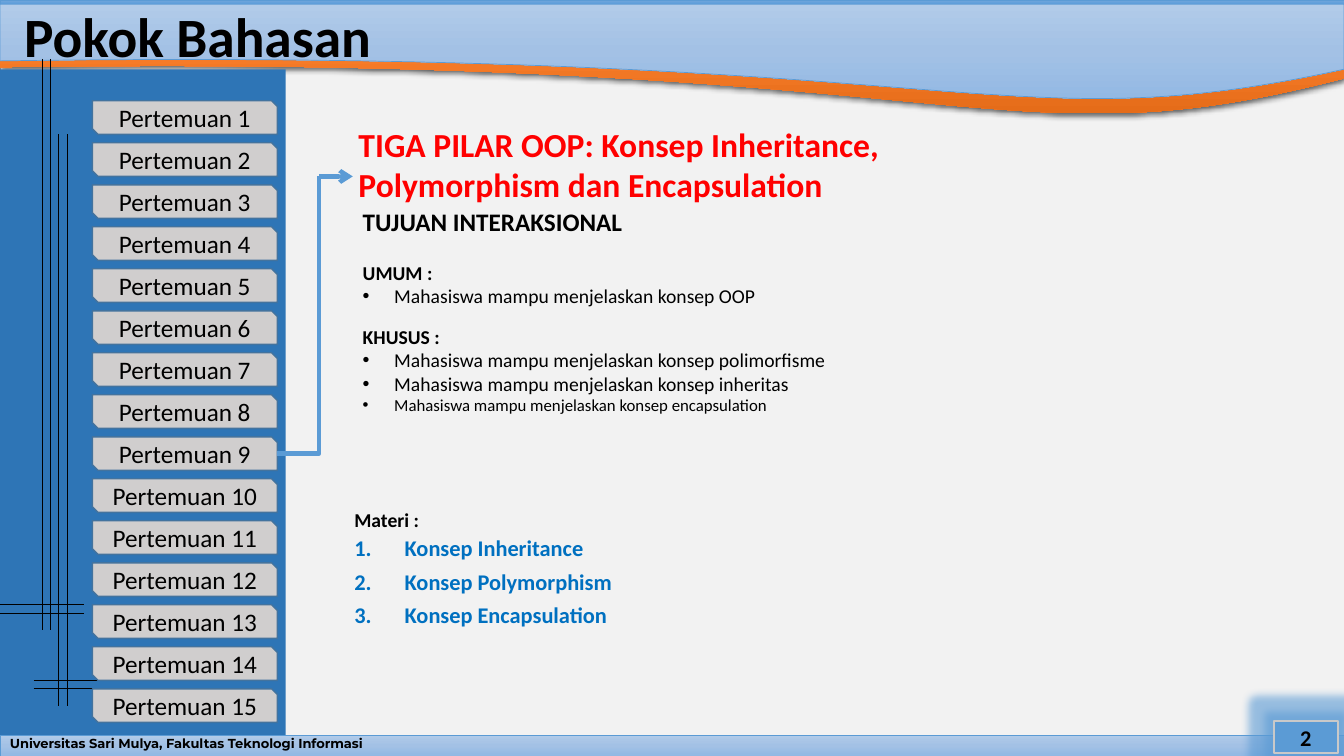
from copy import deepcopy

from lxml.etree import SubElement
from pptx import Presentation
from pptx.dml.color import RGBColor as RGB
from pptx.enum.shapes import MSO_CONNECTOR as LINK, MSO_SHAPE as SHAPE
from pptx.enum.text import MSO_ANCHOR as ANCHOR, PP_ALIGN as ALIGN
from pptx.oxml.ns import qn
from pptx.util import Pt

BLACK = RGB(0x00, 0x00, 0x00)
RED = RGB(0xFF, 0x00, 0x00)
AZURE = RGB(0x00, 0x70, 0xC0)
BLUE = RGB(0x5B, 0x9B, 0xD5)
NAVY = RGB(0x2E, 0x75, 0xB6)
EDGE = RGB(0x43, 0x73, 0x9E)
PAPER = RGB(0xF2, 0xF2, 0xF2)
GREY = RGB(0xA5, 0xA5, 0xA5)
SILVER = RGB(0xC9, 0xC9, 0xC9)
STONE = RGB(0xD0, 0xCE, 0xCE)
PALE = RGB(0xB1, 0xCB, 0xE9), RGB(0xA3, 0xC1, 0xE5), RGB(0x93, 0xB9, 0xE4)
DEEP = RGB(0x71, 0xA6, 0xDB), RGB(0x55, 0x9B, 0xDB), RGB(0x44, 0x8A, 0xCA)
FLAME = RGB(0xF1, 0x8C, 0x57), RGB(0xF6, 0x7B, 0x28), RGB(0xE5, 0x6C, 0x19)

WIDE, HIGH = 960, 540
GOALS = [  # text, size, bold, bullet, space before
    ("TUJUAN INTERAKSIONAL", 18, True, False, 0),
    ("UMUM :", 14, True, False, 17),
    ("Mahasiswa mampu menjelaskan konsep OOP", 14, False, True, 0),
    ("KHUSUS :", 14, True, False, 12),
    ("Mahasiswa mampu menjelaskan konsep polimorfisme", 14, False, True, 0),
    ("Mahasiswa mampu menjelaskan konsep inheritas", 14, False, True, 0),
    ("Mahasiswa mampu menjelaskan konsep encapsulation", 12, False, True, 0),
]
TOPICS = ["Konsep Inheritance", "Konsep Polymorphism", "Konsep Encapsulation"]


def style(para, size, color=BLACK, bold=False, font="Calibri"):
    for run in para.runs:
        run.font.size = Pt(size)
        run.font.color.rgb = color
        run.font.bold = bold
        run.font.name = font


def indent(para, width):
    props = para._p.get_or_add_pPr()
    props.set("marL", str(Pt(width)))
    props.set("indent", str(-Pt(width)))
    return props


def paint(shape, fill, line=None, width=0.5):
    """Fill with one colour, or with a tuple of colours from top to bottom."""
    shape.shadow.inherit = False
    if isinstance(fill, RGB):
        shape.fill.solid()
        shape.fill.fore_color.rgb = fill
    else:
        shape.fill.gradient()
        shape.fill.gradient_angle = 270
        stops = shape.element.spPr.find(".//" + qn("a:gsLst"))
        stops.append(deepcopy(stops[0]))
        for i, stop in enumerate(shape.fill.gradient_stops):
            stop.color.rgb = fill[i]
            stop.position = i / 2
    if line is None:
        shape.line.fill.background()
    else:
        shape.line.color.rgb = line
        shape.line.width = Pt(width)


def block(slide, x, y, w, h, fill, line=None, width=0.5, kind=SHAPE.RECTANGLE):
    shape = slide.shapes.add_shape(kind, Pt(x), Pt(y), Pt(w), Pt(h))
    paint(shape, fill, line, width)
    return shape


def label(shape, text, size, bold=False):
    frame = shape.text_frame
    frame.text = text
    frame.word_wrap = True
    frame.vertical_anchor = ANCHOR.MIDDLE
    frame.margin_top = frame.margin_bottom = 0
    frame.paragraphs[0].alignment = ALIGN.CENTER
    style(frame.paragraphs[0], size, bold=bold)


def effect(shape, kind, color, alpha, **attrs):
    fx = shape.element.spPr.find(qn("a:effectLst"))
    node = SubElement(fx, qn("a:" + kind), {k: str(v) for k, v in attrs.items()})
    tint = SubElement(node, qn("a:srgbClr"), val=str(color))
    SubElement(tint, qn("a:alpha"), val=str(alpha * 1000))


def wave(slide, top, left, dip, crest, right, fill, line=None):
    """Draw a band whose lower edge is a cubic curve from left to right."""
    edge = [(0, left), (702.7, dip), (709.9, crest), (WIDE, right)]
    steps = 60
    points = []
    for i in range(steps + 1):
        t = i / steps
        parts = (1 - t) ** 3, 3 * t * (1 - t) ** 2, 3 * t * t * (1 - t), t ** 3
        points.append(tuple(Pt(sum(f * p[axis] for f, p in zip(parts, edge)))
                            for axis in (0, 1)))
    build = slide.shapes.build_freeform(Pt(WIDE), Pt(top))
    build.add_line_segments([(0, Pt(top))] + points, close=True)
    shape = build.convert_to_shape()
    paint(shape, fill, line)
    return shape


def link(slide, x1, y1, x2, y2, color=BLACK, width=0.5, kind=LINK.STRAIGHT):
    line = slide.shapes.add_connector(kind, Pt(x1), Pt(y1), Pt(x2), Pt(y2))
    line.line.color.rgb = color
    line.line.width = Pt(width)
    SubElement(line.element.spPr, qn("a:effectLst"))
    return line


def note(slide, x, y, w, h, text, size, color=BLACK, bold=True, font="Calibri"):
    box = slide.shapes.add_textbox(Pt(x), Pt(y), Pt(w), Pt(h))
    frame = box.text_frame
    frame.word_wrap = True
    frame.text = text
    style(frame.paragraphs[0], size, color, bold, font)
    return frame


def backdrop(slide):
    block(slide, 0, 3, WIDE, 537, PAPER, GREY)
    flame = wave(slide, 1, 48, 38, 121, 56, FLAME)
    effect(flame, "outerShdw", BLACK, 63, blurRad=Pt(4.5), dist=Pt(1.5),
           dir=5400000, rotWithShape=0)
    block(slide, 0, 525, WIDE, 15, PALE, BLUE)
    block(slide, 0, 0, WIDE, 8, DEEP, BLUE)
    wave(slide, 3, 43.5, 33.5, 104, 49.5, PALE, BLUE)
    foot = note(slide, 0, 525, WIDE, 15, "Universitas Sari Mulya, Fakultas Teknologi Informasi",
                9.3, font="Montserrat")
    foot.vertical_anchor = ANCHOR.MIDDLE
    foot.paragraphs[0].line_spacing = 0.7
    page = block(slide, 910, 515, 45.5, 23, BLUE, SILVER, 1.5)
    effect(page, "glow", BLUE, 60, rad=Pt(12))
    label(page, "2", 16, True)


def heading(slide):
    title = slide.shapes.title
    title.left, title.top, title.width, title.height = Pt(10), Pt(6), Pt(914), Pt(44)
    frame = title.text_frame
    frame.text = "Pokok Bahasan"
    frame.vertical_anchor = ANCHOR.MIDDLE
    para = frame.paragraphs[0]
    para.alignment = ALIGN.LEFT
    para.line_spacing = 0.9
    style(para, 39.6, bold=True)
    slide.shapes.element.append(title.element)  # in front of the backdrop


def sidebar(slide):
    block(slide, 0, 49.5, 204, 475.5, NAVY)
    for x, y in (30, 42), (36, 42), (42, 96), (48, 96):
        link(slide, x, y, x, y + 408)
    for x, y, w in (24, 486, 84), (24, 492, 84), (0, 438, 60), (0, 432, 60):
        link(slide, x, y, x + w, y)
    for i in range(15):
        button = block(slide, 66, 72 + 30 * i, 132, 24, STONE, EDGE, 1,
                       SHAPE.SNIP_2_DIAG_RECTANGLE)
        label(button, f"Pertemuan {i + 1}", 18)


def pointer(slide):
    """Lead from the ninth meeting to its subject."""
    bend = link(slide, 198, 324, 228, 126, BLUE, 3, LINK.ELBOW)
    bend.element.spPr.find(qn("a:prstGeom")).set("prst", "bentConnector2")
    arrow = link(slide, 228, 126, 252, 126, BLUE, 3)
    SubElement(arrow.line._get_or_add_ln(), qn("a:tailEnd"), type="arrow")


def goals(slide):
    frame = note(slide, 252, 144, 348, 176, "", 18)
    for i, (text, size, bold, bullet, gap) in enumerate(GOALS):
        para = frame.add_paragraph() if i else frame.paragraphs[0]
        para.text = text
        para.space_before = Pt(gap)
        style(para, size, bold=bold)
        if bullet:
            props = indent(para, 22.5)
            SubElement(props, qn("a:buFont"), typeface="Arial")
            SubElement(props, qn("a:buChar"), char="•")


def topics(slide):
    note(slide, 246, 359, 90, 24, "Materi :", 14)
    for i, topic in enumerate(TOPICS):
        frame = note(slide, 246, 378 + 24 * i, 462, 27, f"{i + 1}.\t{topic}", 16, AZURE)
        indent(frame.paragraphs[0], 36)


def main():
    deck = Presentation()
    deck.slide_width, deck.slide_height = Pt(WIDE), Pt(HIGH)
    slide = deck.slides.add_slide(deck.slide_layouts[5])
    backdrop(slide)
    heading(slide)
    sidebar(slide)
    pointer(slide)
    note(slide, 249, 85, 523.5, 65.5,
         "TIGA PILAR OOP: Konsep Inheritance, Polymorphism dan Encapsulation", 24, RED)
    goals(slide)
    topics(slide)
    deck.save("out.pptx")


if __name__ == "__main__":
    main()
